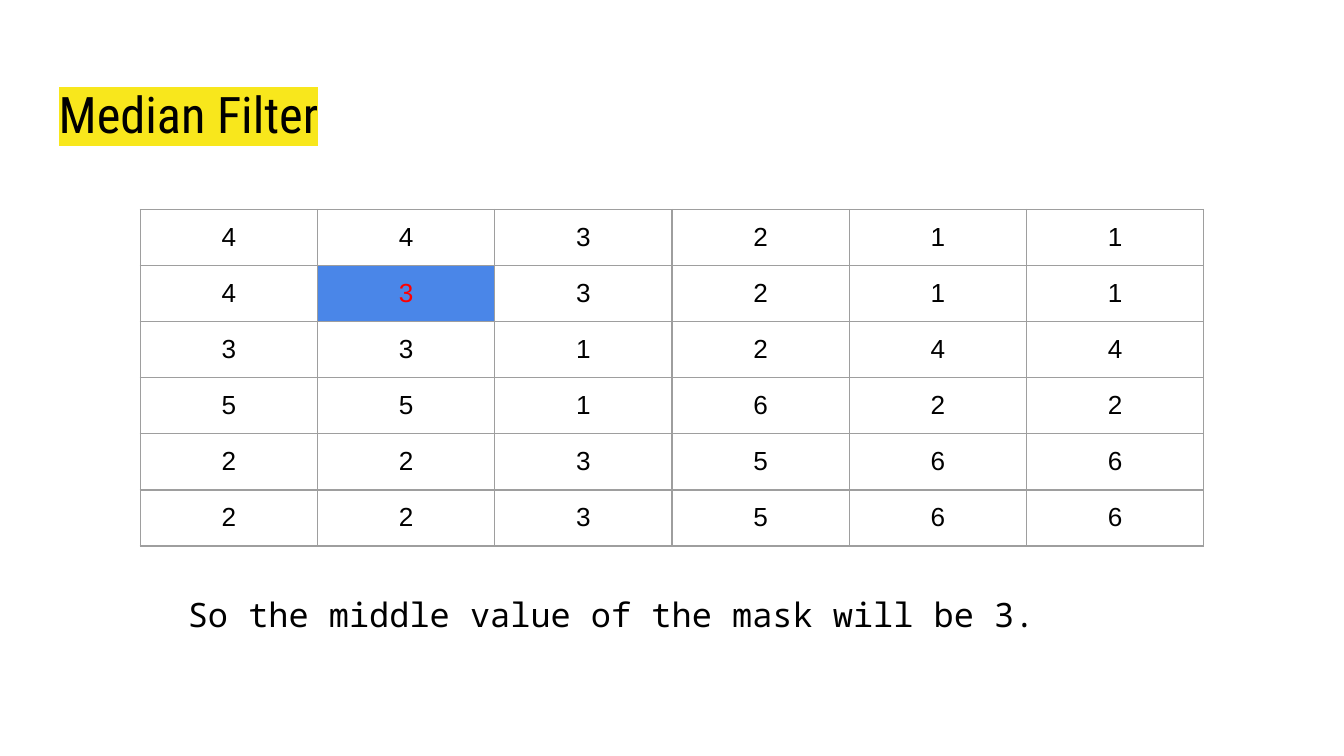
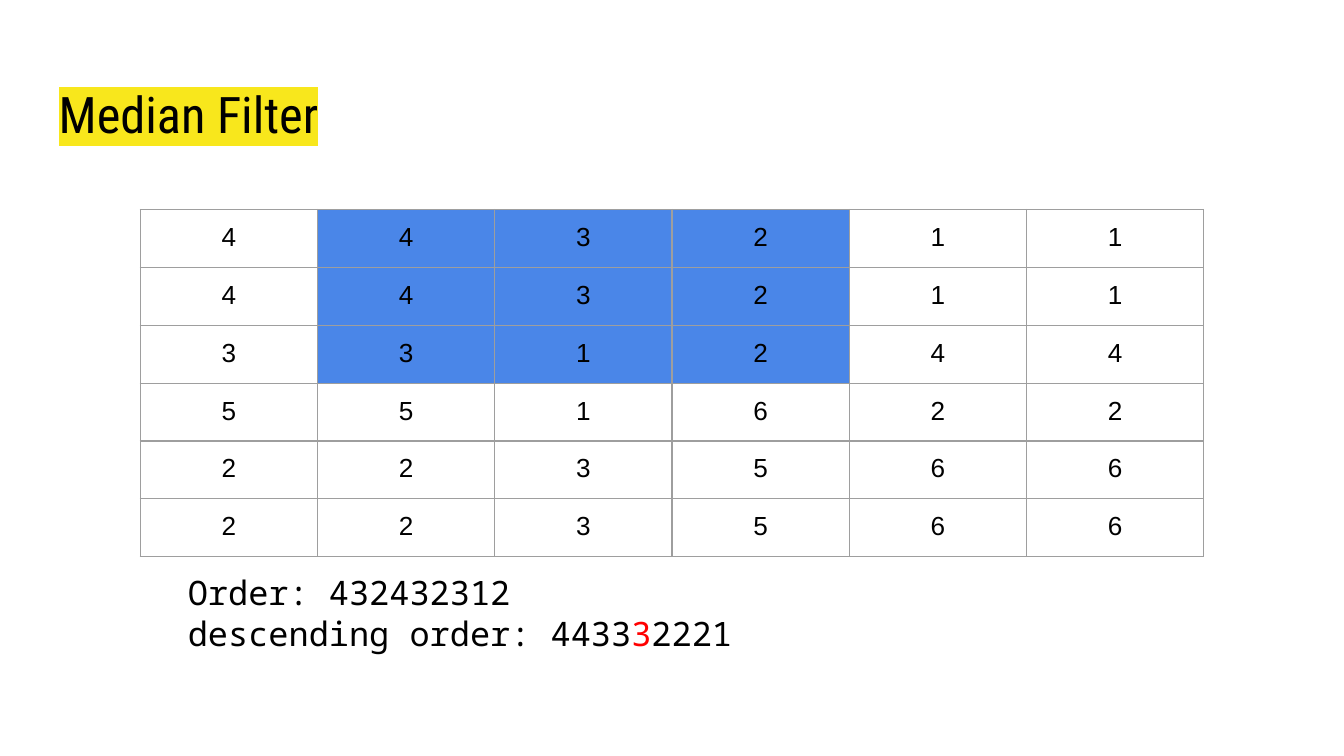
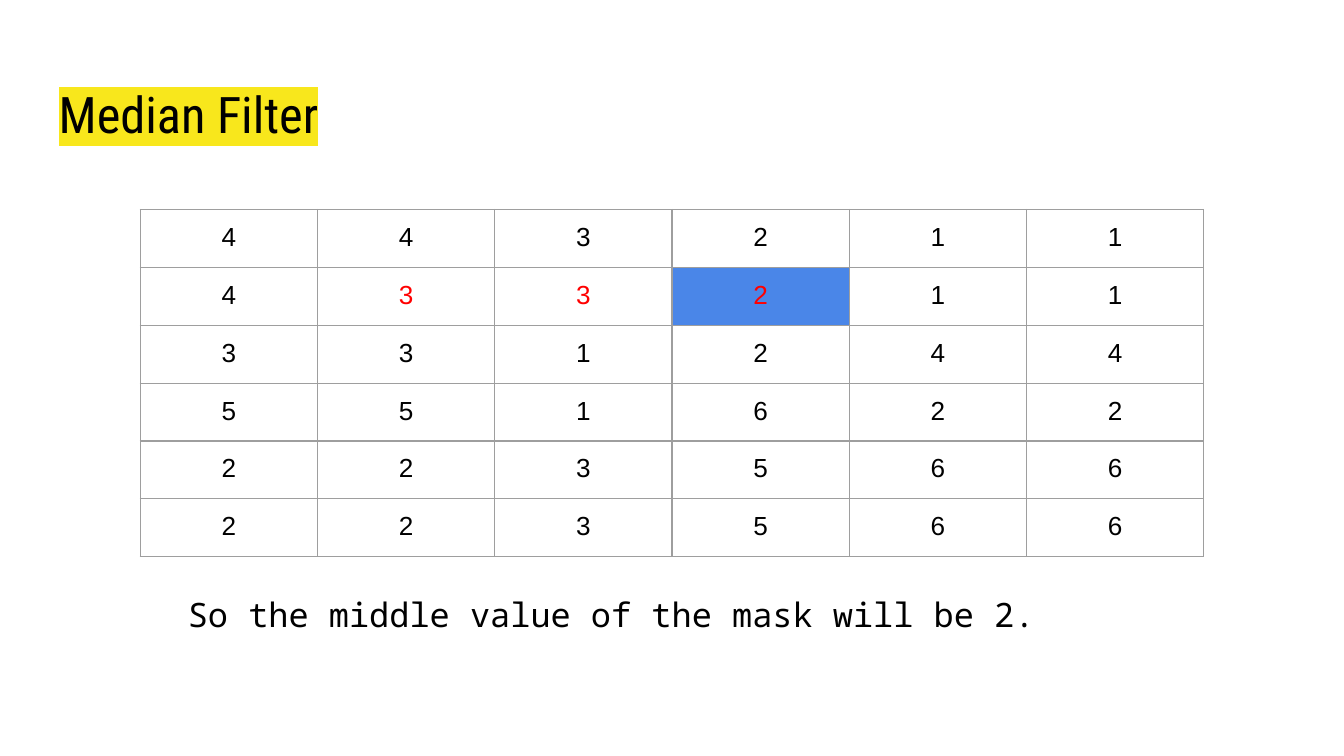
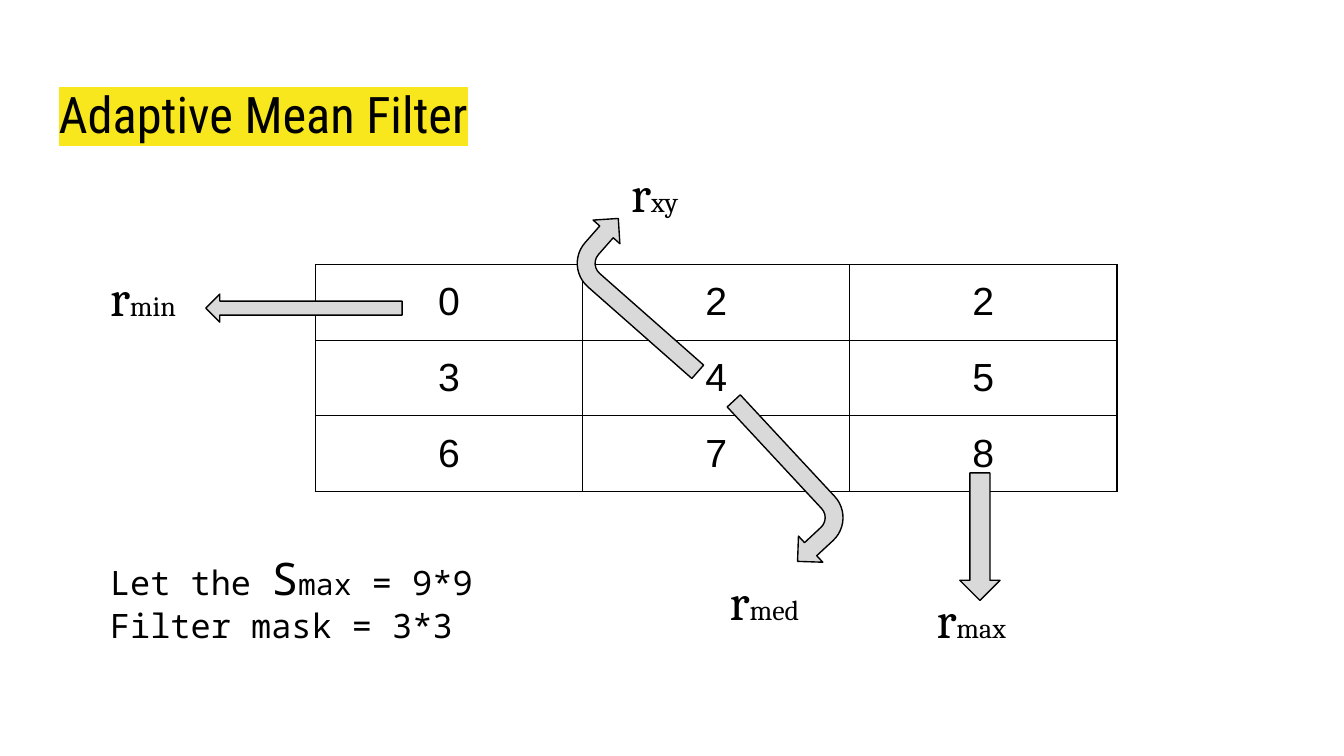
"""Build four slides that explain the median filter and the adaptive mean filter."""
import dataclasses
import itertools

import lxml.etree
import pptx
import pptx.dml.color
import pptx.enum.shapes
import pptx.enum.text
import pptx.oxml.ns
import pptx.util

Cm = pptx.util.Cm
Anchor = pptx.enum.text.MSO_ANCHOR
Align = pptx.enum.text.PP_ALIGN
AutoSize = pptx.enum.text.MSO_AUTO_SIZE
Shape = pptx.enum.shapes.MSO_SHAPE


@dataclasses.dataclass(frozen=True)
class Theme:
    """Colours, fonts and sizes shared by all slides."""
    ink: str = "000000"
    highlight: str = "F8E71C"
    mask: str = "4A86E8"
    result: str = "FF0000"
    grid: str = "9E9E9E"
    arrow: str = "D9D9D9"
    title_font: str = "Roboto Condensed"
    cell_font: str = "Arial"
    note_font: str = "Noto Sans Mono"
    label_font: str = "Cambria"
    title_size: int = 27
    pixel_size: int = 14
    mask_size: int = 21
    note_size: int = 18
    symbol_size: int = 24
    note_subscript_size: int = 16
    label_size: int = 27
    label_subscript_size: int = 15
    line_width: float = 0.75
    inset: float = 0.25


THEME = Theme()
PIXELS = ["443211", "443211", "331244", "551622", "223566", "223566"]
MASK = ["022", "345", "678"]


def set_attributes(target, values):
    """Set every attribute named in a dict."""
    for name, value in values.items():
        setattr(target, name, value)


def rgb(colour):
    """Return a colour object for a hex string."""
    return pptx.dml.color.RGBColor.from_string(colour)


def add_child(parent, tag, **attributes):
    """Append a drawing element to an XML parent."""
    return lxml.etree.SubElement(parent, pptx.oxml.ns.qn(tag), attributes)


def add_run(paragraph, text, font, size, colour=THEME.ink):
    """Add a formatted run to a paragraph."""
    run = paragraph.add_run()
    run.text = text
    set_attributes(run.font, {"name": font, "size": pptx.util.Pt(size)})
    run.font.color.rgb = rgb(colour)
    return run


def add_text(slide, box, lines, font, auto_size=AutoSize.SHAPE_TO_FIT_TEXT):
    """Add a text box; each line is a list of (text, size, optional colour)."""
    frame = slide.shapes.add_textbox(*map(Cm, box)).text_frame
    inset = Cm(THEME.inset)
    set_attributes(frame, {
        "word_wrap": True, "auto_size": auto_size, "vertical_anchor": Anchor.TOP,
        "margin_left": inset, "margin_right": inset,
        "margin_top": inset, "margin_bottom": inset,
    })
    for number, line in enumerate(lines):
        paragraph = frame.add_paragraph() if number else frame.paragraphs[0]
        for text, *style in line:
            add_run(paragraph, text, font, *style)
    return frame


def add_title(slide, text):
    """Add the highlighted slide title."""
    frame = add_text(slide, (0.86, 1.32, 23.67, 1.6), [[(text, THEME.title_size)]],
                     THEME.title_font, AutoSize.NONE)
    properties = frame.paragraphs[0].runs[0].font._element
    highlight = add_child(properties, "a:highlight")
    add_child(highlight, "a:srgbClr", val=THEME.highlight)
    properties.find(pptx.oxml.ns.qn("a:solidFill")).addnext(highlight)


def style_cell(cell, border, fill, anchor):
    """Set margins, anchor, borders and fill of a table cell."""
    inset = Cm(THEME.inset)
    set_attributes(cell, {
        "margin_left": inset, "margin_right": inset, "margin_top": inset,
        "margin_bottom": inset, "vertical_anchor": anchor,
    })
    properties = cell._tc.get_or_add_tcPr()
    for side in ("a:lnL", "a:lnR", "a:lnT", "a:lnB"):
        line = add_child(properties, side, w=str(pptx.util.Pt(THEME.line_width)))
        add_child(add_child(line, "a:solidFill"), "a:srgbClr", val=border)
    if fill:
        cell.fill.solid()
        cell.fill.fore_color.rgb = rgb(fill)
    else:
        cell.fill.background()


def add_grid(slide, origin, cell_size, values, size, border,
             anchor=Anchor.TOP, mask=(), results=None):
    """Add a table of digits with an optional blue mask and red results."""
    results = results or {}
    rows, columns = len(values), len(values[0])
    width, height = cell_size
    table = slide.shapes.add_table(
        rows, columns, *map(Cm, (*origin, columns * width, rows * height))).table
    set_attributes(table, {"first_row": False, "horz_banding": False})
    for column in table.columns:
        column.width = Cm(width)
    for row in table.rows:
        row.height = Cm(height)
    for place in itertools.product(range(rows), range(columns)):
        cell = table.cell(*place)
        style_cell(cell, border, THEME.mask if place in mask else None, anchor)
        paragraph = cell.text_frame.paragraphs[0]
        paragraph.alignment = Align.CENTER
        text = results.get(place, values[place[0]][place[1]])
        colour = THEME.result if place in results else THEME.ink
        add_run(paragraph, text, THEME.cell_font, size, colour)


def add_label(slide, left, top, subscript, width=2.74):
    """Add an r label with its subscript."""
    add_text(slide, (left, top, width, 1.68),
             [[("r", THEME.label_size), (subscript, THEME.label_subscript_size)]],
             THEME.label_font)


def add_arrow(slide, kind, box, rotation=0):
    """Add a grey block arrow."""
    arrow = slide.shapes.add_shape(kind, *map(Cm, box))
    arrow.rotation = rotation
    arrow.shadow.inherit = False
    arrow.fill.solid()
    arrow.fill.fore_color.rgb = rgb(THEME.arrow)
    arrow.line.color.rgb = rgb(THEME.ink)
    arrow.line.width = pptx.util.Pt(THEME.line_width)


def add_slide(presentation, title):
    """Add a blank slide with a title."""
    slide = presentation.slides.add_slide(presentation.slide_layouts[6])
    add_title(slide, title)
    return slide


def add_median_slide(presentation, mask, results, note_lines, note_top, note_height):
    """Add a step of the median filter."""
    slide = add_slide(presentation, "Median Filter")
    add_grid(slide, (2.65, 3.96), (3.35, 1.06), PIXELS, THEME.pixel_size,
             THEME.grid, mask=mask, results=results)
    add_text(slide, (3.3, note_top, 18.8, note_height), note_lines, THEME.note_font)


def add_median_result(presentation, results):
    """Add a step whose newest result is marked and named in the note."""
    place, value = list(results.items())[-1]
    note = f"So the middle value of the mask will be {value}."
    add_median_slide(presentation, {place}, results,
                     [[(note, THEME.note_size)]], 10.97, 1.27)


def add_median_order(presentation):
    """Add the step that sorts the pixels under the mask."""
    size = THEME.note_size
    lines = [
        [("Order: 432432312", size)],
        [("descending order: 4433", size), ("3", size, THEME.result), ("2221", size)],
    ]
    mask = set(itertools.product(range(3), range(1, 4)))
    add_median_slide(presentation, mask, {}, lines, 10.57, 2.06)


def add_adaptive_slide(presentation):
    """Add the adaptive mean filter with its labelled mask."""
    slide = add_slide(presentation, "Adaptive Mean Filter")
    add_grid(slide, (5.96, 5), (5.05, 1.43), MASK, THEME.mask_size,
             THEME.ink, anchor=Anchor.MIDDLE)
    add_label(slide, 1.83, 4.78, "min")
    add_arrow(slide, Shape.LEFT_ARROW, (3.89, 5.56, 3.71, 0.53))
    add_label(slide, 17.45, 10.87, "max")
    add_arrow(slide, Shape.DOWN_ARROW, (18.14, 8.94, 0.76, 2.41))
    add_label(slide, 13.54, 10.52, "med")
    add_label(slide, 11.68, 2.82, "xy", width=1.65)
    add_arrow(slide, Shape.BENT_ARROW, (13.97, 7.47, 1.35, 3.38), 137.1)
    add_arrow(slide, Shape.BENT_ARROW, (11.58, 3.84, 1.35, 3.38), 311.4)
    size = THEME.note_size
    add_text(slide, (1.83, 10.16, 8.92, 2.31), [
        [("Let the ", size), ("S", THEME.symbol_size),
         ("max", THEME.note_subscript_size), (" = 9*9", size)],
        [("Filter mask = 3*3", size)],
    ], THEME.note_font)


def main():
    """Build and save the presentation."""
    presentation = pptx.Presentation()
    set_attributes(presentation, {"slide_width": Cm(25.4), "slide_height": Cm(14.29)})
    add_median_result(presentation, {(1, 1): "3"})
    add_median_order(presentation)
    add_median_result(presentation, {(1, 1): "3", (1, 2): "3", (1, 3): "2"})
    add_adaptive_slide(presentation)
    presentation.save("out.pptx")


if __name__ == "__main__":
    main()
